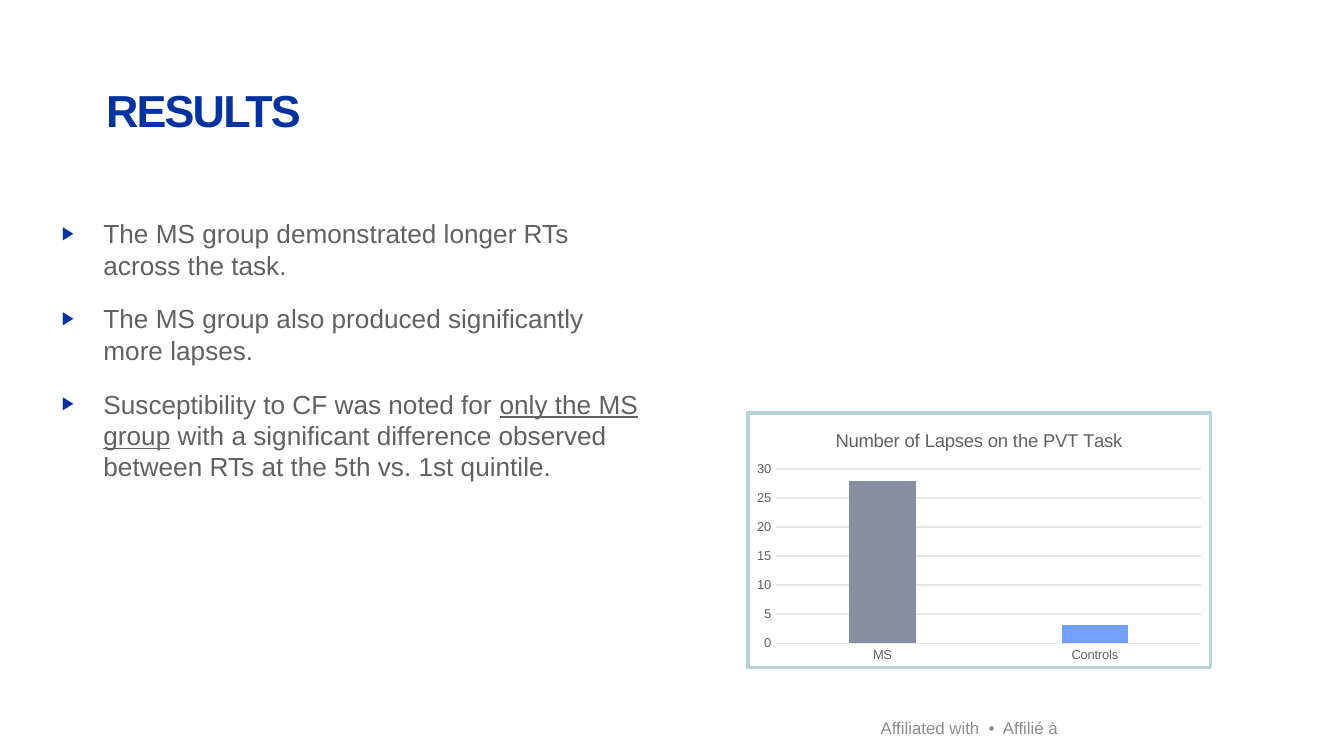
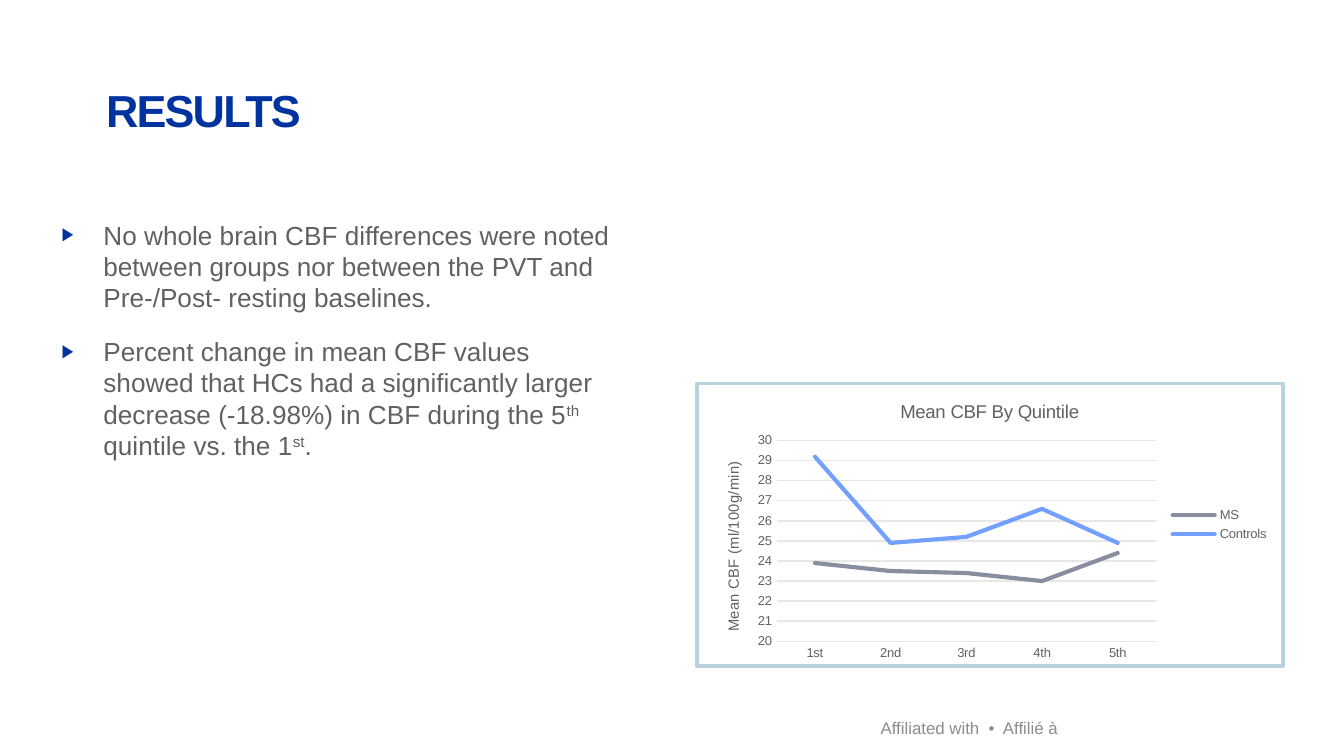
from dataclasses import dataclass

from lxml import etree
from pptx import Presentation
from pptx.chart.data import CategoryChartData
from pptx.dml.color import RGBColor
from pptx.enum.chart import XL_CHART_TYPE, XL_LEGEND_POSITION, XL_TICK_MARK
from pptx.enum.text import MSO_ANCHOR, MSO_AUTO_SIZE, PP_ALIGN
from pptx.oxml import parse_xml
from pptx.oxml.ns import nsdecls, qn
from pptx.util import Inches, Pt


@dataclass(frozen=True)
class Theme:
    font: str = "Arial"
    navy: str = "0033A0"
    body: str = "606164"
    muted: str = "898D8D"
    grid: str = "E7E7E8"
    border: str = "B9D3DC"
    ms: str = "898DA0"
    controls: str = "73A0FF"
    white: str = "FFFFFF"
    title_size: float = 24
    body_size: float = 14
    footer_size: float = 9
    chart_title_size: float = 10
    axis_title_size: float = 8
    label_size: float = 7


THEME = Theme()
TITLE_BOX = (0.79, 0.46, 8.5, 0.59)
FOOTER_BOX = (5.62, 5.34, 2.25, 0.17)
UNDERLINE = {"u": "sng"}
SUPERSCRIPT = {"baseline": "30000"}


def to_inches(box):
    return [Inches(value) for value in box]


def set_font(font, size, color, bold=False):
    formats = {"name": THEME.font, "size": Pt(size), "bold": bold}
    for name, value in formats.items():
        setattr(font, name, value)
    font.color.rgb = RGBColor.from_string(color)


def set_frame(frame, top=0, bottom=0, anchor=MSO_ANCHOR.TOP):
    formats = {
        "margin_left": 0, "margin_right": 0,
        "margin_top": Inches(top), "margin_bottom": Inches(bottom),
        "vertical_anchor": anchor, "word_wrap": True,
        "auto_size": MSO_AUTO_SIZE.NONE,
    }
    for name, value in formats.items():
        setattr(frame, name, value)


def add_span(para, text, size, color, bold=False, attributes=None):
    span = para.add_run()
    span.text = text
    set_font(span.font, size, color, bold)
    for name, value in (attributes or {}).items():
        span._r.get_or_add_rPr().set(name, value)


def add_title(page, text):
    title = page.shapes.title
    title.left, title.top, title.width, title.height = to_inches(TITLE_BOX)
    set_frame(title.text_frame, bottom=0.04, anchor=MSO_ANCHOR.BOTTOM)
    para = title.text_frame.paragraphs[0]
    para.alignment = PP_ALIGN.LEFT
    para.line_spacing = 0.8
    add_span(para, text, THEME.title_size, THEME.navy, True, {"spc": "-100"})


def add_footer(page):
    frame = page.shapes.add_textbox(*to_inches(FOOTER_BOX)).text_frame
    set_frame(frame)
    para = frame.paragraphs[0]
    para.alignment = PP_ALIGN.RIGHT
    add_span(para, "Affiliated with  •  Affilié à", THEME.footer_size, THEME.muted)


def add_bullet(para):
    properties = para._p.get_or_add_pPr()
    indent = Inches(0.31)
    properties.set("marL", str(indent))
    properties.set("indent", str(-indent))
    color = etree.SubElement(properties, qn("a:buClr"))
    etree.SubElement(color, qn("a:srgbClr"), val=THEME.navy)
    etree.SubElement(properties, qn("a:buSzPct"), val="70000")
    etree.SubElement(properties, qn("a:buFont"), typeface=THEME.font)
    etree.SubElement(properties, qn("a:buChar"), char="▶")


def add_findings(page, box, findings):
    """Write one bullet per finding; a finding is a list of (text, attributes)."""
    frame = page.shapes.add_textbox(*to_inches(box)).text_frame
    set_frame(frame, top=0.05)
    for index, spans in enumerate(findings):
        para = frame.add_paragraph() if index else frame.paragraphs[0]
        add_bullet(para)
        para.space_after = Pt(12)
        for text, attributes in spans:
            add_span(para, text, THEME.body_size, THEME.body, attributes=attributes)


def set_chart_title(owner, text, size):
    """Title a chart or an axis."""
    para = owner.text_frame.paragraphs[0]
    add_span(para, text, size, THEME.body)


def frame_chart(chart):
    """Give the chart area its white fill and pale border."""
    area = parse_xml(
        f'<c:spPr {nsdecls("c", "a")}>'
        f'<a:solidFill><a:srgbClr val="{THEME.white}"/></a:solidFill>'
        f'<a:ln w="{Pt(2)}"><a:solidFill><a:srgbClr val="{THEME.border}"/>'
        "</a:solidFill></a:ln></c:spPr>"
    )
    chart.element.find(qn("c:chart")).addnext(area)


def set_line(line, color, width):
    line.color.rgb = RGBColor.from_string(color)
    line.width = Pt(width)


def style_axes(chart, scale):
    for axis in (chart.category_axis, chart.value_axis):
        axis.major_tick_mark = axis.minor_tick_mark = XL_TICK_MARK.NONE
        set_font(axis.tick_labels.font, THEME.label_size, THEME.body)
    values = chart.value_axis
    for name, value in scale.items():
        setattr(values, name, value)
    values.has_major_gridlines = True
    values.format.line.fill.background()
    for line in (chart.category_axis.format.line, values.major_gridlines.format.line):
        set_line(line, THEME.grid, 0.75)


def add_result_chart(page, box, kind, title, categories, series, scale):
    data = CategoryChartData()
    data.categories = categories
    for name, values in series.items():
        data.add_series(name, values)
    chart = page.shapes.add_chart(kind, *to_inches(box), data).chart
    set_font(chart.font, THEME.chart_title_size, THEME.body)
    chart.has_legend = False
    chart.has_title = True
    chart.chart_title.include_in_layout = False
    set_chart_title(chart.chart_title, title, THEME.chart_title_size)
    chart.plots[0].vary_by_categories = False
    style_axes(chart, scale)
    frame_chart(chart)
    return chart


def add_lapses_chart(page, box):
    chart = add_result_chart(
        page, box, XL_CHART_TYPE.COLUMN_CLUSTERED,
        "Number of Lapses on the PVT Task", ["MS", "Controls"],
        {"Series 1": [27.9, 3.2]},
        {"minimum_scale": 0, "maximum_scale": 30, "major_unit": 5},
    )
    plot = chart.plots[0]
    plot.gap_width, plot.overlap = 219, -27
    for index, color in enumerate((THEME.ms, THEME.controls)):
        fill = plot.series[0].points[index].format.fill
        fill.solid()
        fill.fore_color.rgb = RGBColor.from_string(color)


def add_flow_chart(page, box):
    chart = add_result_chart(
        page, box, XL_CHART_TYPE.LINE,
        "Mean CBF By Quintile", ["1st", "2nd", "3rd", "4th", "5th"],
        {"MS": [23.9, 23.5, 23.4, 23, 24.4],
         "Controls": [29.2, 24.9, 25.2, 26.6, 24.9]},
        {"minimum_scale": 20, "maximum_scale": 30, "major_unit": 1},
    )
    set_chart_title(chart.value_axis.axis_title, "Mean CBF (ml/100g/min)",
                    THEME.axis_title_size)
    for series, color in zip(chart.plots[0].series, (THEME.ms, THEME.controls)):
        series.smooth = False
        set_line(series.format.line, color, 2.25)
        for outline in series._element.iter(qn("a:ln")):
            outline.set("cap", "rnd")
    chart.has_legend = True
    chart.legend.position = XL_LEGEND_POSITION.RIGHT
    chart.legend.include_in_layout = False
    set_font(chart.legend.font, THEME.label_size, THEME.body)


def add_results_page(deck, findings_box, findings, add_chart, chart_box):
    page = deck.slides.add_slide(deck.slide_layouts[5])
    add_footer(page)
    add_findings(page, findings_box, findings)
    add_title(page, "RESULTS")
    add_chart(page, chart_box)


def main():
    deck = Presentation()
    deck.slide_width = Inches(10)
    deck.slide_height = deck.slide_width * 9 // 16
    add_results_page(
        deck, (0.46, 1.57, 4.32, 2.98),
        [
            [("The MS group demonstrated longer RTs across the task.", None)],
            [("The MS group also produced significantly more lapses.", None)],
            [("Susceptibility to CF was noted for ", None),
             ("only the MS group", UNDERLINE),
             (" with a significant difference observed between RTs at the "
              "5th vs. 1st quintile.", None)],
        ],
        add_lapses_chart, (5.55, 3.06, 3.47, 1.92),
    )
    add_results_page(
        deck, (0.46, 1.58, 4.16, 2.98),
        [
            [("No whole brain CBF differences were noted between groups nor "
              "between the PVT and Pre-/Post- resting baselines.", None)],
            [("Percent change in mean CBF values showed that HCs had a "
              "significantly larger decrease (-18.98%) in CBF during the 5", None),
             ("th", SUPERSCRIPT), (" quintile vs. the 1", None),
             ("st", SUPERSCRIPT), (".", None)],
        ],
        add_flow_chart, (5.17, 2.84, 4.39, 2.13),
    )
    deck.save("out.pptx")


if __name__ == "__main__":
    main()
